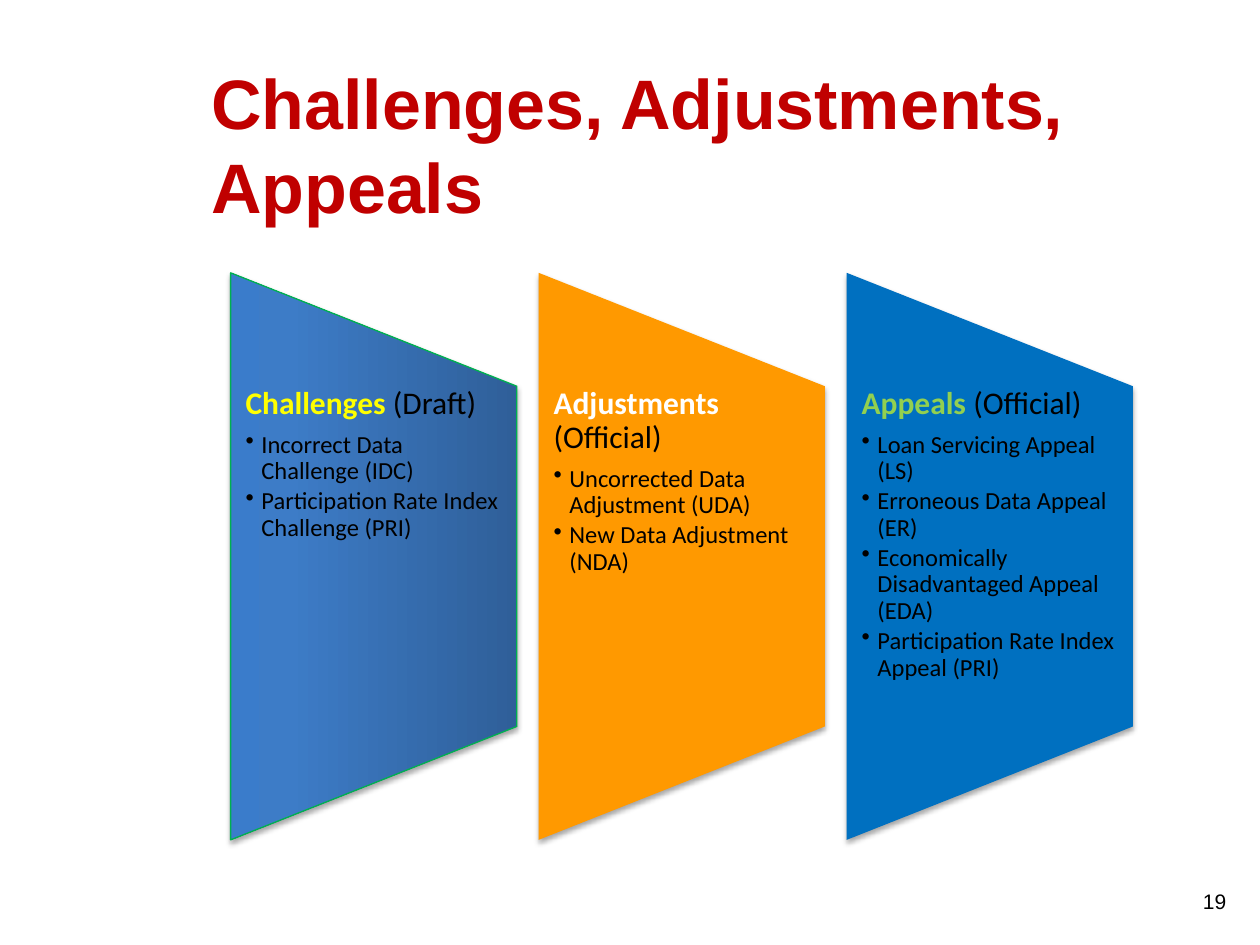
"""Build the slide on challenges, adjustments and appeals."""
from copy import deepcopy

from lxml import etree
from pptx import Presentation
from pptx import util as u
from pptx.dml.color import RGBColor
from pptx.enum import shapes, text
from pptx.oxml import ns

RED = RGBColor(0xC0, 0x00, 0x00)
BLACK = RGBColor(0x00, 0x00, 0x00)
WHITE = RGBColor(0xFF, 0xFF, 0xFF)
YELLOW = RGBColor(0xFF, 0xFF, 0x00)
LIME = RGBColor(0x92, 0xD0, 0x50)
GREEN = RGBColor(0x00, 0xB0, 0x50)
ORANGE = RGBColor(0xFF, 0x99, 0x00)
BLUE = RGBColor(0x00, 0x70, 0xC0)
BLUE_STOPS = [
    (0, RGBColor(0x2F, 0x5F, 0x99)),
    (0.8, RGBColor(0x3D, 0x7C, 0xC7)),
    (1, RGBColor(0x3A, 0x7C, 0xCB)),
]

FIRST_LEFT, PITCH = u.Cm(4.65), u.Cm(6.21)
PANEL_WIDTH, PANEL_HEIGHT, PANEL_TOP = u.Cm(5.77), u.Cm(11.43), u.Cm(5.5)
TEXT_TOP, TEXT_HEIGHT = u.Cm(7.8), u.Cm(6.86)

PANELS = [
    ("Challenges", "(Draft)", YELLOW, BLUE_STOPS, GREEN,
     ["Incorrect Data Challenge (IDC)",
      "Participation Rate Index Challenge (PRI)"]),
    ("Adjustments", "(Official)", WHITE, ORANGE, None,
     ["Uncorrected Data Adjustment (UDA)", "New Data Adjustment (NDA)"]),
    ("Appeals", "(Official)", LIME, BLUE, None,
     ["Loan Servicing Appeal (LS)", "Erroneous Data Appeal (ER)",
      "Economically Disadvantaged Appeal (EDA)",
      "Participation Rate Index Appeal (PRI)"]),
]


def set_font(font, name, size, color, bold=False):
    """Set the face, size, colour and weight of a font."""
    font.name, font.size, font.bold = name, u.Pt(size), bold
    font.color.rgb = color


def add_box(page, left, top, width, height):
    """Add a wrapping text box and return it."""
    box = page.shapes.add_textbox(left, top, width, height)
    box.text_frame.word_wrap = True
    return box


def add_line(page, words, place, size, color, bold=False, align=None):
    """Add a text box with one Arial paragraph."""
    box = add_box(page, *place)
    para = box.text_frame.paragraphs[0]
    para.text, para.alignment = words, align
    set_font(para.font, "Arial", size, color, bold)
    return box


def add_shadow(shape):
    """Give a shape a soft shadow below it."""
    shape.shadow.inherit = False
    effects = shape._element.spPr.find(ns.qn("a:effectLst"))
    shadow = etree.SubElement(effects, ns.qn("a:outerShdw"), blurRad="40000",
                              dist="23000", dir="5400000", rotWithShape="0")
    color = etree.SubElement(shadow, ns.qn("a:srgbClr"), val="000000")
    etree.SubElement(color, ns.qn("a:alpha"), val="35000")


def fill_gradient(shape, stops):
    """Fill a shape with a linear gradient running from its base to its top."""
    shape.fill.gradient()
    shape.fill.gradient_angle = 90
    stop_list = shape._element.spPr.find(".//" + ns.qn("a:gsLst"))
    for _ in stops[len(stop_list):]:
        stop_list.append(deepcopy(stop_list[-1]))
    for stop, (position, color) in zip(shape.fill.gradient_stops, stops):
        stop.position, stop.color.rgb = position, color


def add_panel(page, left, fill, outline):
    """Add a trapezoid turned on its side, wide end to the left."""
    shift = (PANEL_HEIGHT - PANEL_WIDTH) // 2
    panel = page.shapes.add_shape(
        shapes.MSO_SHAPE.FLOWCHART_MANUAL_OPERATION,
        left - shift, PANEL_TOP + shift, PANEL_HEIGHT, PANEL_WIDTH)
    panel.rotation = 270
    if isinstance(fill, list):
        fill_gradient(panel, fill)
    else:
        panel.fill.solid()
        panel.fill.fore_color.rgb = fill
    if outline is None:
        panel.line.fill.background()
    else:
        panel.line.color.rgb = outline
        panel.line.width = u.Pt(0.75)
    add_shadow(panel)


def add_bullet(frame, words):
    """Append a bulleted paragraph."""
    para = frame.add_paragraph()
    para.text, para.level = words, 1
    props = para._p.get_or_add_pPr()
    props.set("marL", str(u.Cm(0.32)))
    props.set("indent", str(-u.Cm(0.32)))
    etree.SubElement(props, ns.qn("a:buChar"), char="•")
    para.line_spacing, para.space_after = 0.9, u.Pt(2.1)
    set_font(para.font, "Calibri", 14, BLACK)


def add_panel_text(page, left, heading, status, color, items):
    """Add the heading and bullets of one panel."""
    frame = add_box(page, left, TEXT_TOP, PANEL_WIDTH, TEXT_HEIGHT).text_frame
    frame.margin_left, frame.margin_right = u.Cm(0.3), u.Cm(0.33)
    frame.margin_top = frame.margin_bottom = 0
    para = frame.paragraphs[0]
    para.line_spacing, para.space_after = 0.9, u.Pt(6.3)
    for words, shade, bold in ((heading + " ", color, True),
                               (status, BLACK, False)):
        span = para.add_run()
        span.text = words
        set_font(span.font, "Calibri", 18, shade, bold)
    for item in items:
        add_bullet(frame, item)


def main():
    """Build and save the deck."""
    deck = Presentation()
    deck.slide_width, deck.slide_height = u.Cm(25.4), u.Cm(19.05)
    page = deck.slides.add_slide(deck.slide_layouts[6])
    title = add_line(page, "Challenges, Adjustments, Appeals",
                     (u.Cm(4.01), u.Cm(1.07), u.Cm(20.52), u.Cm(3.68)),
                     40, RED, bold=True)
    title.text_frame.auto_size = text.MSO_AUTO_SIZE.SHAPE_TO_FIT_TEXT
    for index, (heading, status, color, fill, outline, items) in enumerate(PANELS):
        left = FIRST_LEFT + index * PITCH
        add_panel(page, left, fill, outline)
        add_panel_text(page, left, heading, status, color, items)
    add_line(page, "19", (u.Cm(19.69), u.Cm(17.78), u.Cm(5.28), u.Cm(1.27)),
             12, BLACK, align=text.PP_ALIGN.RIGHT)
    deck.save("out.pptx")


if __name__ == "__main__":
    main()
